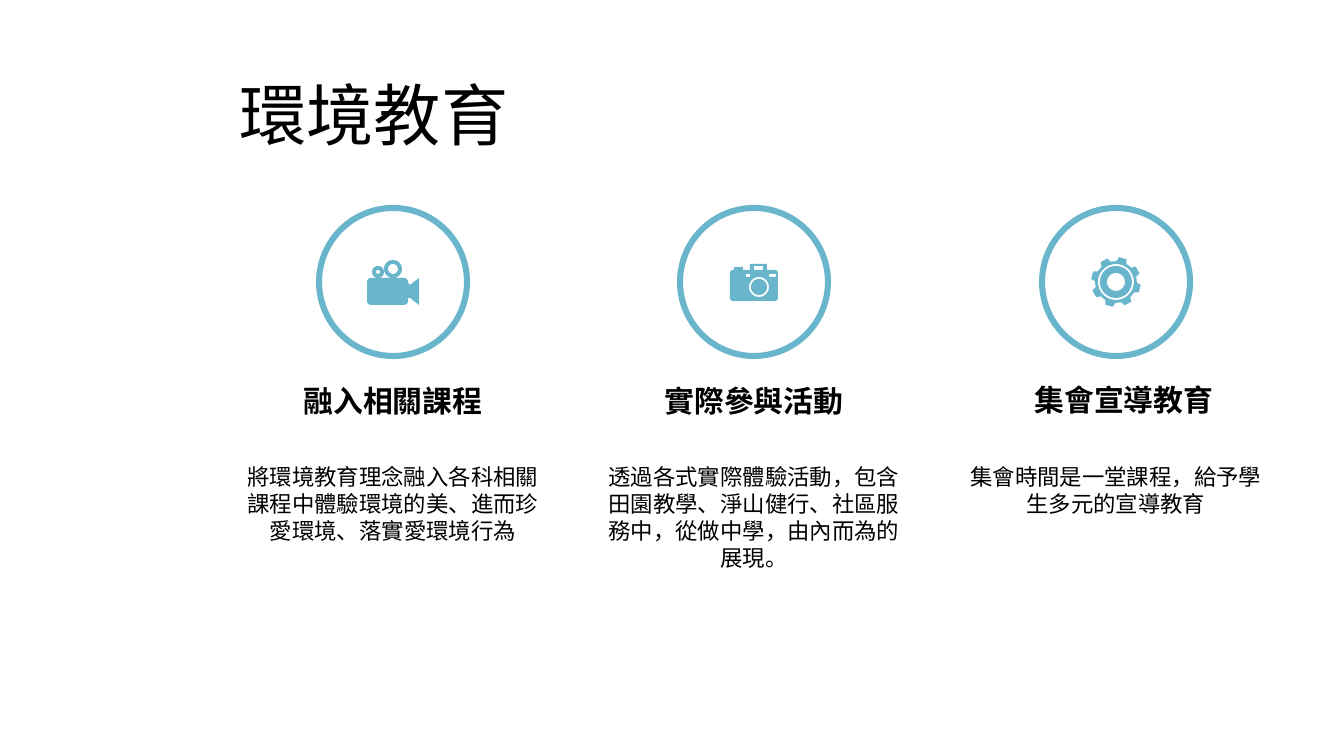
"""Builds the environmental education slide with three icon columns."""
import math
from dataclasses import dataclass

from pptx import Presentation
from pptx import util as u
from pptx.dml import color
from pptx.enum import shapes, text


@dataclass(frozen=True)
class Theme:
    font: str = "Arial"
    ink: str = "000000"
    accent: str = "69B6CC"
    paper: str = "FFFFFF"
    title_size: int = 36
    heading_size: int = 16
    body_size: int = 12
    ring_width: float = 3.25


def px(length):
    return u.Emu(round(length * 914400 / 134.4))


def rgb(value):
    return color.RGBColor.from_string(value)


def polar(x, y, radius, degrees):
    angle = math.radians(degrees)
    return x + radius * math.cos(angle), y + radius * math.sin(angle)


def circle(x, y, radius):
    return [polar(x, y, radius, degrees) for degrees in range(0, 360, 10)]


def box(left, top, right, bottom, radius=0):
    if not radius:
        return [(left, top), (right, top), (right, bottom), (left, bottom)]
    corners = [(right - radius, bottom - radius), (left + radius, bottom - radius),
               (left + radius, top + radius), (right - radius, top + radius)]
    return [polar(x, y, radius, 90 * index + step)
            for index, (x, y) in enumerate(corners) for step in range(0, 91, 15)]


def gear(teeth, root, tip):
    corners = [(root, -14), (tip, -9), (tip, 9), (root, 14)]
    return [polar(0, 0, radius, tooth * 360 / teeth - 29 + offset)
            for tooth in range(teeth) for radius, offset in corners]


VIDEO_ICON = [
    box(-26, -4, 15, 23, 4),
    [(15, 1), (17, 3), (26, -4), (26, 23), (17, 16), (15, 16)],
    circle(-15, -10, 6), circle(-15, -10, 2),
    circle(0, -13, 9), circle(0, -13, 5),
]
CAMERA_ICON = [
    box(-24, -12, 24, 19, 3), box(-20, -15, -11, -12),
    box(-4, -18, 13, -12), box(0, -16, 9, -12),
    box(-8, -8, -4, -5), box(15, -8, 22, -5),
    circle(5, 5, 10), circle(5, 5, 8),
]
GEAR_ICON = [gear(8, 21, 25), circle(0, 0, 18), circle(0, 0, 16), circle(0, 0, 9)]

COLUMNS = [
    (393, VIDEO_ICON, "融入相關課程", (393, 376),
     "將環境教育理念融入各科相關課程中體驗環境的美、進而珍愛環境、落實愛環境行為", 95),
    (754, CAMERA_ICON, "實際參與活動", (754, 376),
     "透過各式實際體驗活動，包含田園教學、淨山健行、社區服務中，從做中學，由內而為的展現。", 122),
    (1116, GEAR_ICON, "集會宣導教育", (1124, 375),
     "集會時間是一堂課程，給予學生多元的宣導教育", 67),
]


class SlideBuilder:
    """Holds the theme and the current slide and draws each kind of element."""

    def __init__(self, presentation, theme):
        self.theme = theme
        self.slide = presentation.slides.add_slide(presentation.slide_layouts[5])
        self.slide.background.fill.solid()
        self.slide.background.fill.fore_color.rgb = rgb(theme.paper)

    def set_text(self, shape, content, size, alignment, bold=False):
        frame = shape.text_frame
        frame.word_wrap = True
        frame.text = content
        paragraph = frame.paragraphs[0]
        paragraph.alignment = alignment
        font = paragraph.font
        font.name, font.size, font.bold = self.theme.font, u.Pt(size), bold
        font.color.rgb = rgb(self.theme.ink)
        return frame

    def title(self, content, left, top, width, height):
        shape = self.slide.shapes.title
        shape.left, shape.top = px(left), px(top)
        shape.width, shape.height = px(width), px(height)
        frame = self.set_text(shape, content, self.theme.title_size, text.PP_ALIGN.LEFT)
        frame.auto_size = text.MSO_AUTO_SIZE.NONE
        frame.vertical_anchor = text.MSO_ANCHOR.MIDDLE

    def label(self, content, center, top, width, height, size, bold=False):
        shape = self.slide.shapes.add_textbox(
            px(center - width / 2), px(top), px(width), px(height))
        frame = self.set_text(shape, content, size, text.PP_ALIGN.CENTER, bold)
        frame.auto_size = text.MSO_AUTO_SIZE.SHAPE_TO_FIT_TEXT

    def ring(self, x, y, radius):
        shape = self.slide.shapes.add_shape(
            shapes.MSO_SHAPE.OVAL, px(x - radius), px(y - radius),
            px(2 * radius), px(2 * radius))
        shape.shadow.inherit = False
        shape.fill.solid()
        shape.fill.fore_color.rgb = rgb(self.theme.paper)
        shape.line.color.rgb = rgb(self.theme.accent)
        shape.line.width = u.Pt(self.theme.ring_width)

    def icon(self, contours, x, y):
        outlines = [[(px(x + dx), px(y + dy)) for dx, dy in contour]
                    for contour in contours]
        builder = self.slide.shapes.build_freeform(*outlines[0][0])
        builder.add_line_segments(outlines[0][1:])
        for outline in outlines[1:]:
            builder.move_to(*outline[0])
            builder.add_line_segments(outline[1:])
        shape = builder.convert_to_shape()
        shape.shadow.inherit = False
        shape.fill.solid()
        shape.fill.fore_color.rgb = rgb(self.theme.accent)
        shape.line.fill.background()


def main():
    presentation = Presentation()
    presentation.slide_width, presentation.slide_height = px(1344), px(756)
    theme = Theme()
    builder = SlideBuilder(presentation, theme)
    builder.title("環境教育", 226, 71, 1106, 85)
    for center, icon, heading, (heading_x, heading_y), body, height in COLUMNS:
        builder.ring(center, 282, 74)
        builder.icon(icon, center, 282)
        builder.label(body, center, 457, 332, height, theme.body_size)
        builder.label(heading, heading_x, heading_y, 332, 50, theme.heading_size, True)
    presentation.save("out.pptx")


if __name__ == "__main__":
    main()
